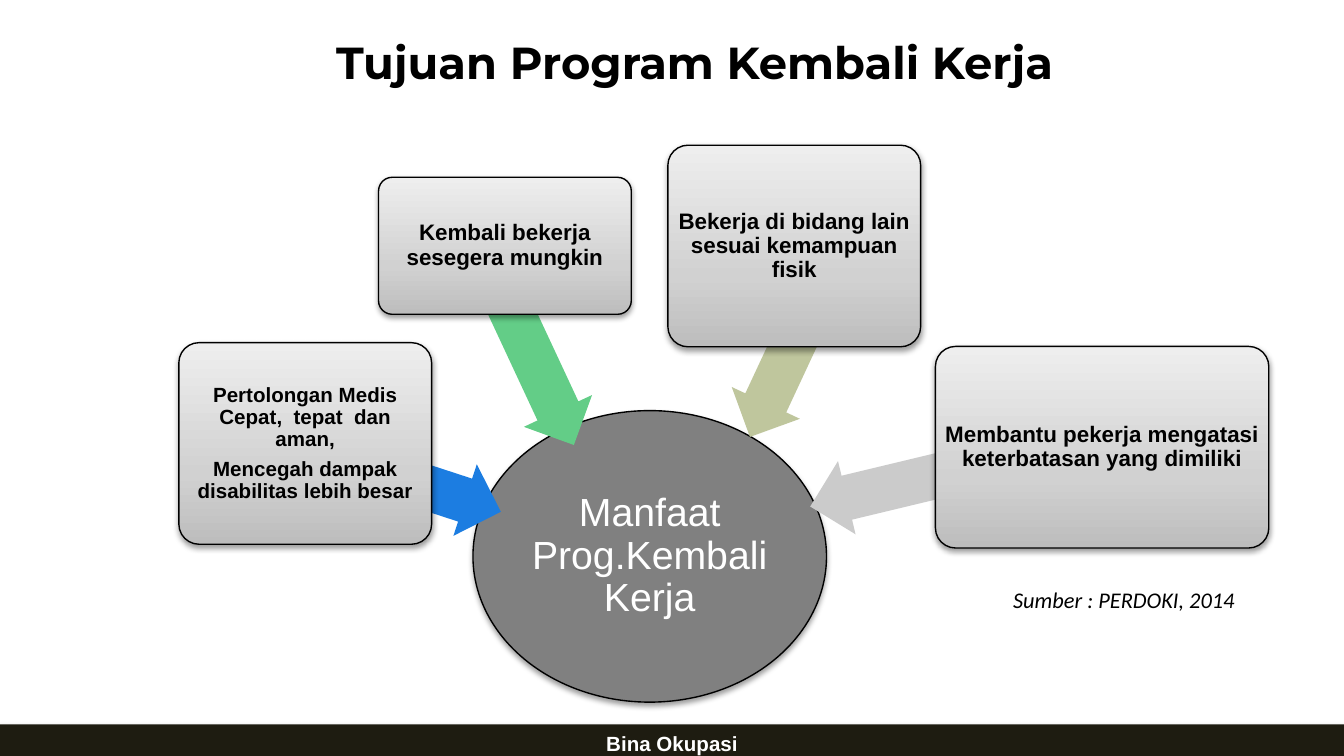
from copy import deepcopy
from lxml.etree import SubElement as Sub
from pptx import Presentation
from pptx.dml.color import RGBColor as RGB
from pptx.enum.shapes import MSO_SHAPE as Kind
from pptx.enum.text import MSO_ANCHOR as Anchor, PP_ALIGN as Align
from pptx.oxml.ns import qn
from pptx.util import Pt

BLACK = RGB(0x00, 0x00, 0x00)
WHITE = RGB(0xFF, 0xFF, 0xFF)
GRAY = RGB(0x80, 0x80, 0x80)
DARK = RGB(0x1E, 0x1C, 0x11)
BLUE = RGB(0x1C, 0x7D, 0xE1)
GREEN = RGB(0x63, 0xCD, 0x87)
OLIVE = RGB(0xBF, 0xC6, 0x9D)
SILVER = RGB(0xCB, 0xCB, 0xCB)
FADE = [(0, RGB(0xBD, 0xBD, 0xBD)), (0.35, RGB(0xD1, 0xD1, 0xD1)), (1, RGB(0xEE, 0xEE, 0xEE))]

deck = Presentation()
deck.slide_width, deck.slide_height = Pt(720), Pt(405)
slide = deck.slides.add_slide(deck.slide_layouts[5])


def write(shape, lines, size, color, font="Arial", bold=False, italic=False,
          align=Align.CENTER, anchor=Anchor.MIDDLE, pad=(2, 2), lead=0.9, after=0):
    frame = shape.text_frame
    frame.word_wrap = True
    frame.vertical_anchor = anchor
    frame.margin_left = frame.margin_right = Pt(pad[0])
    frame.margin_top = frame.margin_bottom = Pt(pad[1])
    for i, line in enumerate(lines):
        para = frame.add_paragraph() if i else frame.paragraphs[0]
        para.alignment = align
        para.line_spacing = lead
        para.space_before = Pt(0)
        para.space_after = Pt(after)
        run = para.add_run()
        run.text = line
        run.font.name = font
        run.font.size = Pt(size)
        run.font.bold = bold
        run.font.italic = italic
        run.font.color.rgb = color


def draw(kind, box, fill=None, edge=False, alpha=0):
    shape = slide.shapes.add_shape(kind, *map(Pt, box))
    shape.shadow.inherit = False
    if fill is not None:
        shape.fill.solid()
        shape.fill.fore_color.rgb = fill
    if edge:
        shape.line.color.rgb = BLACK
        shape.line.width = Pt(0.75)
    else:
        shape.line.fill.background()
    if alpha:
        glow = Sub(shape._element.spPr.find(qn("a:effectLst")), qn("a:outerShdw"),
                   blurRad=str(Pt(3.1)), dist=str(Pt(1.6)), dir="5400000", rotWithShape="0")
        tint = Sub(glow, qn("a:srgbClr"), val="000000")
        Sub(tint, qn("a:alpha"), val=str(alpha * 1000))
    return shape


title = slide.shapes.title
title.left, title.top, title.width, title.height = Pt(172.8), Pt(15.1), Pt(402.5), Pt(28.1)
write(title, ["Tujuan Program Kembali Kerja"], 24, BLACK, "Montserrat", bold=True,
      align=Align.LEFT, anchor=Anchor.TOP, pad=(7.2, 3.6), lead=1)
title.text_frame.word_wrap = False

hub = draw(Kind.OVAL, (253.4, 220, 189.4, 156.2), GRAY, True, 38)
write(hub, ["Manfaat Prog.Kembali Kerja"], 21, WHITE, pad=(1, 1))

cards = [
    ((95.8, 183.6, 135.4, 108), (174.2, 239, 96.5), 198.1, BLUE, 11,
     ["Pertolongan Medis Cepat,  tepat  dan aman,", "Mencegah dampak disabilitas lebih besar"]),
    ((202.8, 95, 135.4, 73.4), (238.3, 174.2, 97.2), 245, GREEN, 12,
     ["Kembali bekerja sesegera mungkin"]),
    ((357.8, 77.8, 135.4, 108), (373.7, 169.9, 97.2), 295, OLIVE, 12,
     ["Bekerja di bidang lain sesuai kemampuan fisik"]),
    ((501.1, 185.6, 178.6, 108), (432, 234, 147.6), 346.5, SILVER, 12,
     ["Membantu pekerja mengatasi keterbatasan yang dimiliki"]),
]
for box, place, turn, color, size, lines in cards:
    arrow = draw(Kind.LEFT_ARROW, (*place, 40.3), color)
    arrow.adjustments[0] = 0.6
    arrow.adjustments[1] = 0.5
    arrow.rotation = turn

    card = draw(Kind.ROUNDED_RECTANGLE, box, edge=True, alpha=38)
    card.adjustments[0] = 0.1
    card.fill.gradient()
    card.fill.gradient_angle = 90
    stops = card._element.spPr.find(qn("a:gradFill")).find(qn("a:gsLst"))
    stops.insert(1, deepcopy(stops[0]))
    for stop, (spot, shade) in zip(card.fill.gradient_stops, FADE):
        stop.position = spot
        stop.color.rgb = shade
    write(card, lines, size, BLACK, bold=True, after=4)

source = slide.shapes.add_textbox(Pt(535.7), Pt(310.3), Pt(156.2), Pt(21.6))
write(source, ["Sumber : PERDOKI, 2014"], 12, BLACK, "Calibri", italic=True,
      align=Align.LEFT, anchor=Anchor.TOP, pad=(7.2, 3.6), lead=1)

foot = draw(Kind.RECTANGLE, (-1.4, 388.1, 722.9, 20.9), DARK, alpha=35)
write(foot, ["Bina Okupasi"], 11, WHITE, bold=True, anchor=Anchor.TOP, pad=(7.2, 3.6), lead=1)

deck.save("out.pptx")
